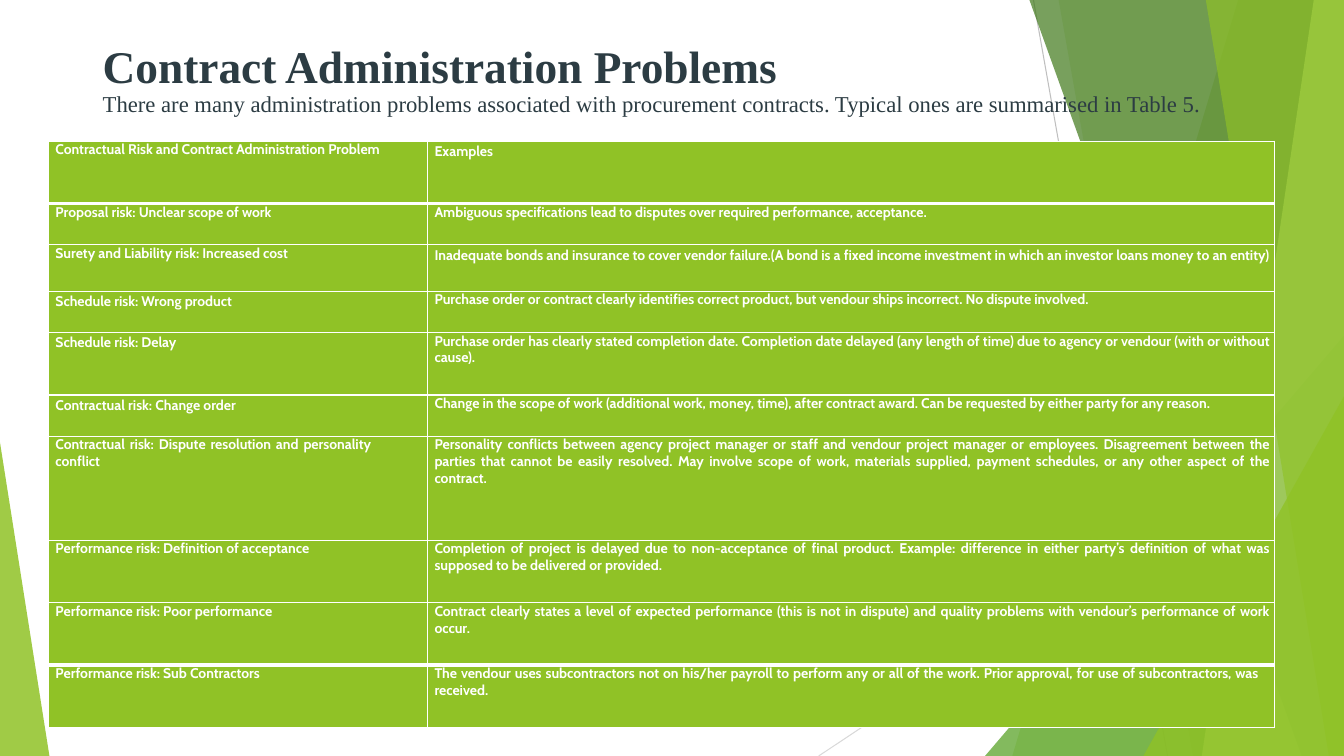
from lxml.etree import SubElement
from pptx import Presentation
from pptx.dml.color import RGBColor
from pptx.enum.shapes import MSO_CONNECTOR, MSO_SHAPE
from pptx.enum.text import PP_ALIGN
from pptx.oxml.ns import qn
from pptx.util import Inches, Pt

WIDTH, HEIGHT = 13.33, 7.5
GREEN, WHITE, SLATE = "90C226", "FFFFFF", "2C3C43"


def paint(fill, color, opacity=100):
    """Fill with a solid colour; opacity is a percentage."""
    fill.solid()
    fill.fore_color.rgb = RGBColor.from_string(color)
    if opacity < 100:
        srgb = fill._xPr.find(qn("a:solidFill")).find(qn("a:srgbClr"))
        SubElement(srgb, qn("a:alpha"), val=str(opacity * 1000))


def write(paragraph, text, font, size, color, bold=False, align=PP_ALIGN.LEFT,
          spacing=None, left=0, right=0):
    """Put formatted text in a paragraph; left and right are indents in inches."""
    properties = paragraph._p.get_or_add_pPr()
    properties.set("marL", str(Inches(left)))
    properties.set("marR", str(Inches(right)))
    paragraph.alignment = align
    paragraph.line_spacing = spacing
    run = paragraph.add_run()
    run.text = text
    run.font.name = font
    run.font.size = Pt(size)
    run.font.bold = bold
    run.font.color.rgb = RGBColor.from_string(color)


deck = Presentation()
deck.slide_width, deck.slide_height = Inches(WIDTH), Inches(HEIGHT)
slide = deck.slides.add_slide(deck.slide_layouts[6])
shapes = slide.shapes

# Background facets
for x1, y1, x2, y2, color in [
    (10.25, 0, 11.58, HEIGHT, "BFBFBF"),
    (WIDTH, 4.03, 8.12, HEIGHT, "D9D9D9"),
]:
    ray = shapes.add_connector(MSO_CONNECTOR.STRAIGHT, Inches(x1), Inches(y1),
                               Inches(x2), Inches(y2))
    ray.line.color.rgb = RGBColor.from_string(color)
    ray.line.width = Pt(0.75)
    SubElement(ray._element.spPr, qn("a:effectLst"))

# Bands run to the right edge: (top x, bottom x, colour, opacity)
# Triangles: (left, top, width, apex, colour, opacity), all resting on the bottom edge
facets = [
    (12.28, 10.04, GREEN, 30),
    (10.5, 11.83, GREEN, 20),
    (9.77, 3.33, 3.56, 1, "54A021", 72),
    (10.21, 12.91, "3F7819", 70),
    (13.03, 11.92, "C0E474", 70),
    (11.96, 13.18, GREEN, 65),
    (11.34, 3.93, 1.99, 1, GREEN, 80),
    (0, 4.39, 0.49, 0, GREEN, 85),
]
for *geometry, color, opacity in facets:
    if len(geometry) == 2:
        top_x, bottom_x = geometry
        outline = shapes.build_freeform(Inches(top_x), 0)
        outline.add_line_segments([
            (Inches(WIDTH), 0),
            (Inches(WIDTH), Inches(HEIGHT)),
            (Inches(bottom_x), Inches(HEIGHT)),
        ])
        facet = outline.convert_to_shape()
    else:
        left, top, width, apex = geometry
        facet = shapes.add_shape(MSO_SHAPE.ISOSCELES_TRIANGLE, Inches(left), Inches(top),
                                 Inches(width), Inches(HEIGHT - top))
        facet.adjustments[0] = apex
    paint(facet.fill, color, opacity)
    facet.line.fill.background()
    facet.shadow.inherit = False

# Heading
heading = shapes.add_textbox(Inches(0.92), Inches(0.39), Inches(11.5), Inches(0.9)).text_frame
heading.word_wrap = True
write(heading.paragraphs[0], "Contract Administration Problems",
      "Times New Roman", 32.4, SLATE, bold=True, spacing=0.9)
write(heading.add_paragraph(),
      "There are many administration problems associated with procurement contracts. "
      "Typical ones are summarised in Table 5.",
      "Times New Roman", 16.2, SLATE, spacing=0.9)

# Table of risks: (row height, risk, example)
risks = [
    (0.62, "Contractual Risk and Contract Administration Problem", "Examples"),
    (0.41, "Proposal risk: Unclear scope of work",
     "Ambiguous specifications lead to disputes over required performance, acceptance."),
    (0.46, "Surety and Liability risk: Increased cost",
     "Inadequate bonds and insurance to cover vendor failure.(A bond is a fixed income "
     "investment in which an investor loans money to an entity)"),
    (0.41, "Schedule risk: Wrong product",
     "Purchase order or contract clearly identifies correct product, but vendour ships "
     "incorrect. No dispute involved."),
    (0.62, "Schedule risk: Delay",
     "Purchase order has clearly stated completion date. Completion date delayed (any "
     "length of time) due to agency or vendour (with or without cause)."),
    (0.41, "Contractual risk: Change order",
     "Change in the scope of work (additional work, money, time), after contract award. "
     "Can be requested by either party for any reason."),
    (1.03, "Contractual risk: Dispute resolution and personality conflict",
     "Personality conflicts between agency project manager or staff and vendour project "
     "manager or employees. Disagreement between the parties that cannot be easily "
     "resolved. May involve scope of work, materials supplied, payment schedules, or any "
     "other aspect of the contract."),
    (0.62, "Performance risk: Definition of acceptance",
     "Completion of project is delayed due to non-acceptance of final product. Example: "
     "difference in either party’s definition of what was supposed to be delivered or "
     "provided."),
    (0.62, "Performance risk: Poor performance",
     "Contract clearly states a level of expected performance (this is not in dispute) "
     "and quality problems with vendour’s performance of work occur."),
    (0.62, "Performance risk: Sub Contractors",
     "The vendour uses subcontractors not on his/her payroll to perform any or all of the "
     "work. Prior approval, for use of subcontractors, was received."),
]
line_heights = {(0, 1): 13.7, (2, 1): 13.4, (3, 0): 13.4, (4, 0): 13.4, (5, 0): 13.4}
right_indents = {(6, 0): 0.56, (9, 1): 0.16}
last_row = len(risks) - 1

risk_table = shapes.add_table(len(risks), 2, Inches(0.48), Inches(1.4),
                              Inches(12.16), Inches(5.82)).table
risk_table.horz_banding = False
for column, width in zip(risk_table.columns, (3.76, 8.4)):
    column.width = Inches(width)

for r, (height, *texts) in enumerate(risks):
    risk_table.rows[r].height = Inches(height)
    for c, text in enumerate(texts):
        cell = risk_table.cell(r, c)
        cell.margin_left = cell.margin_right = cell.margin_top = cell.margin_bottom = 0
        line_height = line_heights.get((r, c))
        write(cell.text_frame.paragraphs[0], text, "Cabin", 10, WHITE, bold=True,
              align=PP_ALIGN.JUSTIFY, spacing=Pt(line_height) if line_height else None,
              left=0.07, right=right_indents.get((r, c), 0.05 * c))
        border_widths = {
            "L": 1,
            "R": 1,
            "T": 3 if r in (1, last_row) else 1,
            "B": 3 if r in (0, last_row - 1) else 1,
        }
        for side, points in border_widths.items():
            border = SubElement(cell._tc.get_or_add_tcPr(), qn(f"a:ln{side}"), w=str(Pt(points)))
            SubElement(SubElement(border, qn("a:solidFill")), qn("a:srgbClr"), val=WHITE)
        paint(cell.fill, GREEN)

deck.save("out.pptx")
